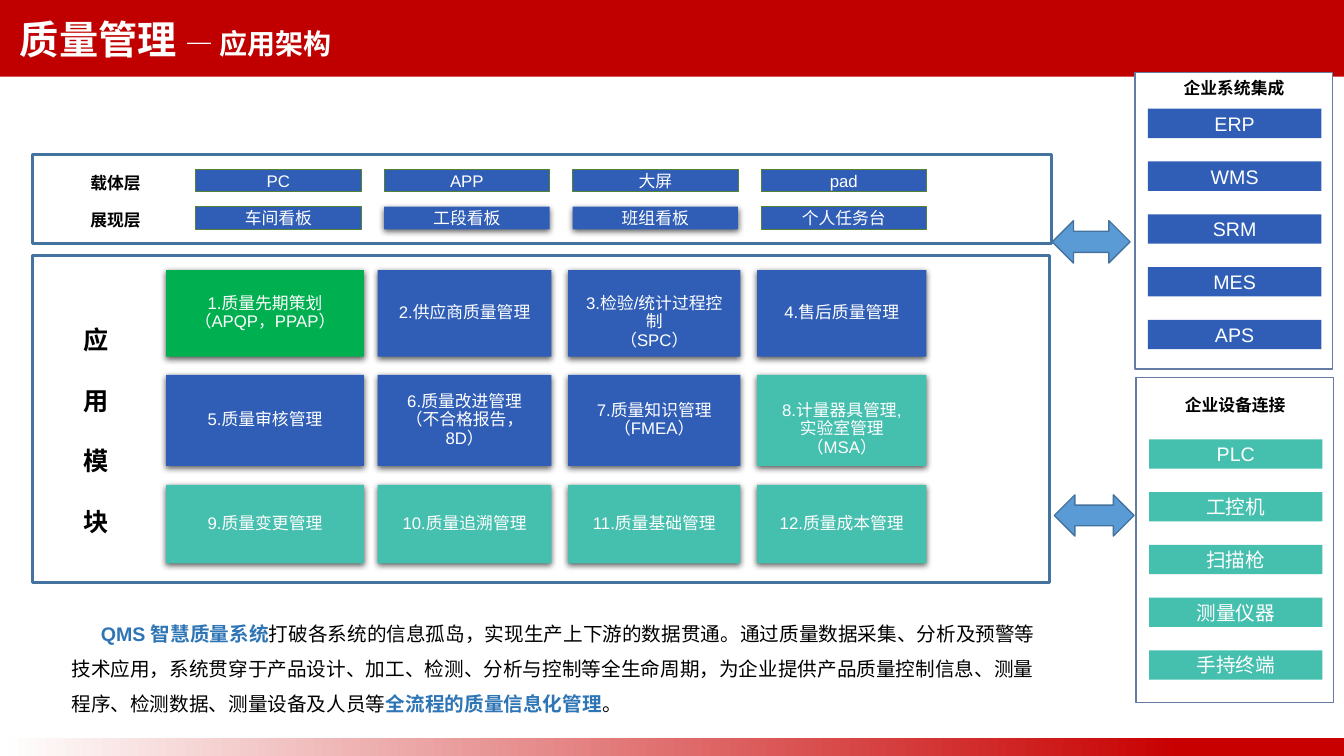
from pptx import Presentation
from pptx.dml.color import RGBColor
from pptx.enum.shapes import MSO_SHAPE as Kind
from pptx.enum.text import MSO_ANCHOR as Anchor, MSO_AUTO_SIZE as Fit, PP_ALIGN as Align
from pptx.oxml import parse_xml
from pptx.oxml.ns import nsdecls, qn
from pptx.util import Cm, Pt

HUES = {
    "red": "C00000", "deep": "C80000", "white": "FFFFFF", "black": "000000",
    "blue": "305EB6", "green": "00B050", "teal": "45BFAE", "sky": "5B9BD5",
    "frame": "43739E", "slate": "657BA4", "moss": "548235", "link": "2E75B6",
}
FONT = "Arial"
SHADE = (
    f'<a:outerShdw {nsdecls("a")} blurRad="57150" dist="19050" dir="5400000" '
    'algn="ctr" rotWithShape="0"><a:srgbClr val="000000">'
    '<a:alpha val="63000"/></a:srgbClr></a:outerShdw>'
)


def hue(name):
    """Return the named colour."""
    return RGBColor.from_string(HUES[name])


def style(para, size, tint, bold=None):
    """Set the font of a whole paragraph."""
    font = para.font
    font.name, font.size, font.bold = FONT, Pt(size), bold
    font.color.rgb = hue(tint)


def block(slide, box, fill=None, edge=None, width=1, kind=Kind.RECTANGLE, shade=False):
    """Draw a preset shape in the box."""
    shape = slide.shapes.add_shape(kind, *map(Cm, box))
    shape.shadow.inherit = False
    if fill:
        shape.fill.solid()
        shape.fill.fore_color.rgb = hue(fill)
    else:
        shape.fill.background()
    if edge:
        shape.line.color.rgb = hue(edge)
        shape.line.width = Pt(width)
    else:
        shape.line.fill.background()
    if shade:
        shape._element.spPr.find(qn("a:effectLst")).append(parse_xml(SHADE))
    return shape


def label(shape, text, size, space=None):
    """Centre white lines of text in a shape."""
    frame = shape.text_frame
    frame.word_wrap = True
    frame.vertical_anchor = Anchor.MIDDLE
    frame.text = text
    for para in frame.paragraphs:
        para.alignment = Align.CENTER
        para.line_spacing = space
        style(para, size, "white")


def note(slide, box, text, size=12, gap=0):
    """Place bold black text, with a gap between its paragraphs."""
    frame = slide.shapes.add_textbox(*map(Cm, box)).text_frame
    frame.word_wrap = True
    frame.text = text
    for rank, para in enumerate(frame.paragraphs):
        if rank:
            para.space_before = Pt(gap)
        style(para, size, "black", True)


def header(slide, box):
    """Draw the title band and fill the title placeholder."""
    left, top, wide, high = box
    title = slide.shapes.title
    band = block(slide, box, "red")
    title._element.addprevious(band._element)
    title.left, title.top = Cm(left + 0.25), Cm(top + 0.22)
    title.width, title.height = Cm(wide - 8), Cm(high - 0.4)
    frame = title.text_frame
    frame.auto_size = Fit.NONE
    frame.word_wrap = True
    frame.vertical_anchor = Anchor.MIDDLE
    para = frame.paragraphs[0]
    para.alignment = Align.LEFT
    for text, size in (("质量管理 ", 28), ("— 应用架构", 20)):
        run = para.add_run()
        run.text = text
        run.font.size = Pt(size)
    para.font.name, para.font.bold = FONT, True
    para.font.color.rgb = hue("white")


def footer(slide, box):
    """Draw the strip that fades from white to red."""
    fill = block(slide, box, "red").fill
    fill.gradient()
    fill.gradient_angle = 0
    for stop, place, name in zip(fill.gradient_stops, (0, 0.88), ("white", "deep")):
        stop.position = place
        stop.color.rgb = hue(name)


def layers(slide, box):
    """Draw the carrier and display layers."""
    left, top, _, _ = box
    block(slide, box, "white", "frame", 2.25)
    rows = (
        ("载体层", 0.37, ("PC", "APP", "大屏", "pad")),
        ("展现层", 1.32, ("车间看板", "工段看板", "班组看板", "个人任务台")),
    )
    for name, drop, items in rows:
        note(slide, (left + 1.22, top + drop - 0.04, 2.87, 0.76), name)
        for col, item in enumerate(items):
            shade = item in ("工段看板", "班组看板")
            spot = (left + 4.12 + 4.75 * col, top + drop, 4.17, 0.57)
            bar = block(slide, spot, "blue", None if shade else "moss", 0.5, shade=shade)
            label(bar, item, 12)


def modules(slide, box):
    """Draw the grid of application modules."""
    left, top, _, _ = box
    block(slide, box, None, "frame", 2.25)
    note(slide, (left + 1.04, top + 1.63, 1.3, 5.64), "应\n用\n模\n块", 18, 21.6)
    cols = ((3.38, 4.98), (8.71, 4.38), (13.51, 4.34), (18.27, 4.27))
    rows = (
        (0.38, 2.18, (
            ("1.质量先期策划\n（APQP，PPAP）", "green"),
            ("2.供应商质量管理", "blue"),
            ("3.检验/统计过程控制\n（SPC）", "blue"),
            ("4.售后质量管理", "blue"))),
        (3.02, 2.29, (
            ("5.质量审核管理", "blue"),
            ("6.质量改进管理\n（不合格报告，8D）", "blue"),
            ("7.质量知识管理\n（FMEA）", "blue"),
            ("8.计量器具管理,\n实验室管理\n（MSA）", "teal"))),
        (5.79, 1.98, (
            ("9.质量变更管理", "teal"),
            ("10.质量追溯管理", "teal"),
            ("11.质量基础管理", "teal"),
            ("12.质量成本管理", "teal"))),
    )
    for drop, high, cells in rows:
        for (shift, wide), (text, fill) in zip(cols, cells):
            spot = (left + shift, top + drop, wide, high)
            card = block(slide, spot, fill, shade=True)
            label(card, text, 12, 0.9)
            if text[0] in "38":
                card.text_frame.margin_top = Cm(0.58)


def panel(slide, box, head, drop, first, items, fill):
    """Draw a side panel with its heading and evenly spaced bars."""
    left, top, _, _ = box
    block(slide, box, "white", "slate")
    note(slide, (left + 0.98, top + drop, 3.66, 0.76), head)
    for row, item in enumerate(items):
        spot = (left + 0.33, top + first + 1.33 * row, 4.37, 0.74)
        label(block(slide, spot, fill), item, 14)


def summary(slide, box):
    """Write the closing paragraph."""
    frame = slide.shapes.add_textbox(*map(Cm, box)).text_frame
    frame.word_wrap = True
    para = frame.paragraphs[0]
    para.line_spacing = 1.5
    para._p.get_or_add_pPr().set("indent", str(Cm(0.74)))
    parts = (
        ("QMS 智慧质量系统", True),
        ("打破各系统的信息孤岛，实现生产上下游的数据贯通。通过质量数据采集、分析及预警等"
         "技术应用，系统贯穿于产品设计、加工、检测、分析与控制等全生命周期，为企业提供"
         "产品质量控制信息、测量程序、检测数据、测量设备及人员等", False),
        ("全流程的质量信息化管理", True),
        ("。", False),
    )
    for text, key in parts:
        run = para.add_run()
        run.text = text
        run.font.bold = key
        run.font.color.rgb = hue("link" if key else "black")
    para.font.name, para.font.size = FONT, Pt(14)


def main():
    """Build the slide and save it."""
    deck = Presentation()
    deck.slide_width, deck.slide_height = Cm(33.87), Cm(19.05)
    slide = deck.slides.add_slide(deck.slide_layouts[5])
    header(slide, (0, 0, 33.87, 1.93))
    footer(slide, (0, 18.59, 33.87, 0.46))
    layers(slide, (0.81, 3.89, 25.68, 2.24))
    modules(slide, (0.81, 6.43, 25.65, 8.25))
    panel(slide, (28.6, 1.83, 4.98, 7.47), "企业系统集成", 0, 0.91,
          ("ERP", "WMS", "SRM", "MES", "APS"), "blue")
    panel(slide, (28.63, 9.52, 4.98, 8.18), "企业设备连接", 0.3, 1.55,
          ("PLC", "工控机", "扫描枪", "测量仪器", "手持终端"), "teal")
    for spot in ((26.52, 5.56, 1.96, 1.07), (26.57, 12.47, 2.01, 1.04)):
        block(slide, spot, "sky", "frame", kind=Kind.LEFT_RIGHT_ARROW)
    summary(slide, (1.55, 15.24, 24.97, 2.84))
    deck.save("out.pptx")


if __name__ == "__main__":
    main()
